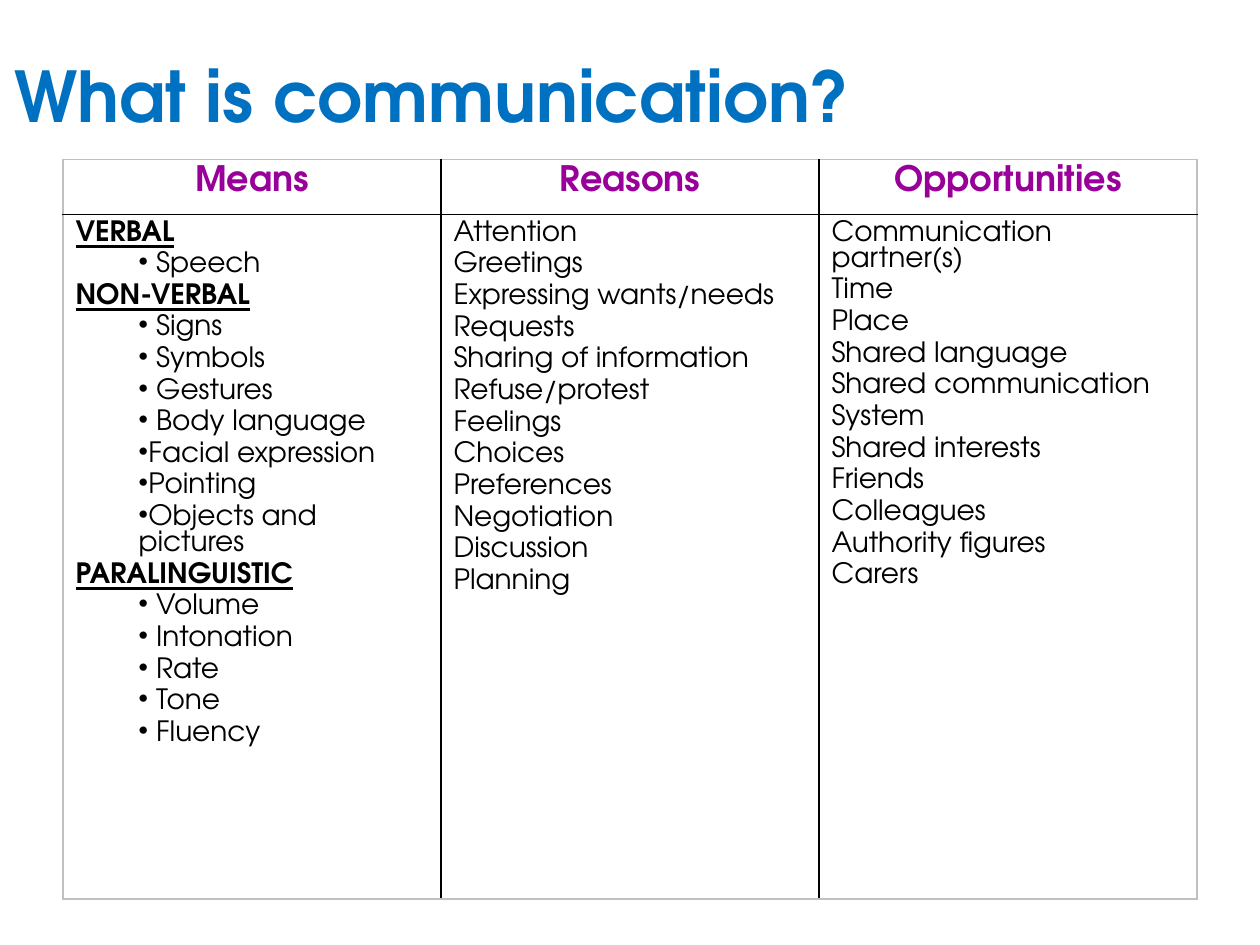
from dataclasses import dataclass

from lxml import etree
from pptx import Presentation
from pptx.dml.color import RGBColor
from pptx.enum import text as txt
from pptx.oxml import ns
from pptx.util import Cm, Pt


@dataclass(frozen=True)
class Theme:
    font: str = "TeX Gyre Adventor"
    title: str = "0070C0"
    heading: str = "990099"
    body: str = "000000"
    rule: str = "000000"
    frame: str = "C0C0C0"
    title_size: int = 40
    heading_size: int = 20
    body_size: int = 16
    rule_width: float = 1


@dataclass(frozen=True)
class Group:
    items: tuple[str, ...]
    label: str = ""


@dataclass(frozen=True)
class Topic:
    heading: str
    groups: tuple[Group, ...]


THEME = Theme()
TOPICS = (
    Topic("Means", (
        Group((" Speech",), "VERBAL"),
        Group((" Signs", " Symbols", " Gestures", " Body language",
               "Facial expression", "Pointing", "Objects and pictures"), "NON-VERBAL"),
        Group((" Volume", " Intonation", " Rate", " Tone", " Fluency"), "PARALINGUISTIC"),
    )),
    Topic("Reasons", (
        Group(("Attention", "Greetings", "Expressing wants/needs", "Requests",
               "Sharing of information", "Refuse/protest", "Feelings", "Choices",
               "Preferences", "Negotiation", "Discussion", "Planning")),
    )),
    Topic("Opportunities", (
        Group(("Communication partner(s)", "Time", "Place", "Shared language",
               "Shared communication", "System", "Shared interests", "Friends",
               "Colleagues", "Authority figures", "Carers")),
    )),
)


def write(frame, content: str, *, size: int = THEME.body_size, color: str = THEME.body,
          bold: bool = False, underline: bool = False, centered: bool = False,
          bullet: bool = False) -> None:
    first = not frame.text
    line = frame.paragraphs[0] if first else frame.add_paragraph()
    line.alignment = txt.PP_ALIGN.CENTER if centered else txt.PP_ALIGN.LEFT
    properties = line._p.get_or_add_pPr()
    if not first:
        spacing = etree.SubElement(properties, ns.qn("a:spcBef"))
        etree.SubElement(spacing, ns.qn("a:spcPct"), val="20000")
    if bullet:
        line.level = 1
        properties.set("marL", str(Cm(1.27)))
        properties.set("indent", "0")
        etree.SubElement(properties, ns.qn("a:buChar"), char="•")
    run = line.add_run()
    run.text = content
    run.font.name = THEME.font
    run.font.size = Pt(size)
    run.font.bold = bold
    run.font.underline = underline
    run.font.color.rgb = RGBColor.from_string(color)


def draw_borders(cell, colors: dict[str, str]) -> None:
    properties = cell._tc.get_or_add_tcPr()
    for position, (side, color) in enumerate(colors.items()):
        border = etree.Element(ns.qn(f"a:{side}"), w=str(Pt(THEME.rule_width)))
        fill = etree.SubElement(border, ns.qn("a:solidFill"))
        etree.SubElement(fill, ns.qn("a:srgbClr"), val=color)
        properties.insert(position, border)


def draw_topic(table, column: int, topic: Topic) -> None:
    write(table.cell(0, column).text_frame, topic.heading, size=THEME.heading_size,
          color=THEME.heading, bold=True, centered=True)
    details = table.cell(1, column).text_frame
    for group in topic.groups:
        if group.label:
            write(details, group.label, bold=True, underline=True)
        for item in group.items:
            write(details, item, bullet=bool(group.label))
    last = len(TOPICS) - 1
    for row in range(2):
        cell = table.cell(row, column)
        cell.fill.background()
        draw_borders(cell, {
            "lnL": THEME.frame if column == 0 else THEME.rule,
            "lnR": THEME.frame if column == last else THEME.rule,
            "lnT": THEME.frame if row == 0 else THEME.rule,
            "lnB": THEME.frame if row == 1 else THEME.rule,
        })


def main() -> None:
    deck = Presentation()
    deck.slide_width, deck.slide_height = Cm(25.4), Cm(19.05)
    slide = deck.slides.add_slide(deck.slide_layouts[5])

    title = slide.shapes.title
    title.left, title.top, title.width, title.height = Cm(-1.9), Cm(0.91), Cm(21.21), Cm(2.01)
    title.text_frame.vertical_anchor = txt.MSO_ANCHOR.MIDDLE
    write(title.text_frame, "What is communication?", size=THEME.title_size,
          color=THEME.title, bold=True, centered=True)

    heights = Cm(1.1), Cm(13.8)
    table = slide.shapes.add_table(2, len(TOPICS), Cm(1.27), Cm(3.22),
                                   Cm(22.86), sum(heights)).table
    table.first_row = table.horz_banding = False
    for row, height in zip(table.rows, heights):
        row.height = height
    for column, topic in enumerate(TOPICS):
        draw_topic(table, column, topic)
    deck.save("out.pptx")


if __name__ == "__main__":
    main()
